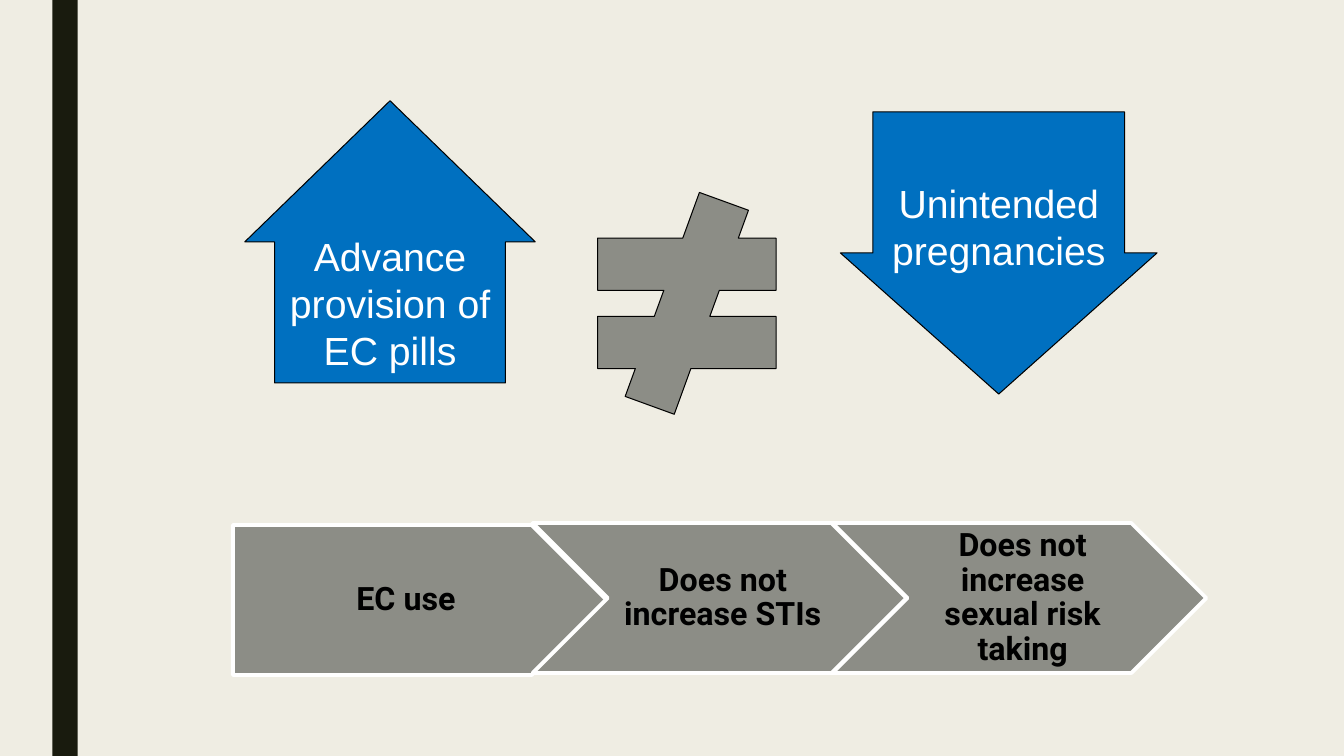
import pptx
import pptx.dml.color
import pptx.enum.shapes
import pptx.enum.text
import pptx.util

Cm = pptx.util.Cm
Pt = pptx.util.Pt
RGBColor = pptx.dml.color.RGBColor
SHAPE = pptx.enum.shapes.MSO_SHAPE
ANCHOR = pptx.enum.text.MSO_ANCHOR
CENTER = pptx.enum.text.PP_ALIGN.CENTER

CREAM = RGBColor(0xEF, 0xED, 0xE3)
DARK = RGBColor(0x19, 0x1B, 0x0E)
BLUE = RGBColor(0x00, 0x70, 0xC0)
GRAY = RGBColor(0x8C, 0x8D, 0x86)
BLACK = RGBColor(0, 0, 0)
WHITE = RGBColor(0xFF, 0xFF, 0xFF)


def add_figure(slide, preset, box, fill, line=None, weight=0.75):
    """Draw a preset shape in box (left, top, width, height in cm)."""
    figure = slide.shapes.add_shape(preset, *map(Cm, box))
    figure.shadow.inherit = False
    figure.fill.solid()
    figure.fill.fore_color.rgb = fill
    if line is None:
        figure.line.fill.background()
    else:
        figure.line.color.rgb = line
        figure.line.width = Pt(weight)
    return figure


def add_label(slide, box, wording, font, size, color, bold=False):
    """Add centred text in box and return its text frame."""
    frame = slide.shapes.add_textbox(*map(Cm, box)).text_frame
    frame.word_wrap = True
    paragraph = frame.paragraphs[0]
    paragraph.alignment = CENTER
    run = paragraph.add_run()
    run.text = wording
    run.font.name = font
    run.font.size = Pt(size)
    run.font.bold = bold
    run.font.color.rgb = color
    return frame


def add_side_bar(slide, box):
    add_figure(slide, SHAPE.RECTANGLE, box, DARK)


def add_trend_arrow(slide, preset, box, wording, inset, drop, label_height):
    """Draw a block arrow with a label inset from its sides, drop below its top."""
    left, top, width, height = box
    arrow = add_figure(slide, preset, box, BLUE, BLACK)
    arrow.adjustments[0] = 0.795
    arrow.adjustments[1] = 0.5
    label_box = (left + inset, top + drop, width - 2 * inset, label_height)
    add_label(slide, label_box, wording, "Arial", 28, WHITE)


def add_comparison(slide, box):
    """Place the rising arrow, the not-equal sign and the falling arrow."""
    left, top, width, height = box
    arrow_height = 7.11
    falling_width = 7.98
    add_trend_arrow(slide, SHAPE.UP_ARROW, (left, top, 7.32, arrow_height),
                    "Advance provision of EC pills", 0.72, 3.18, 3.81)
    add_figure(slide, SHAPE.MATH_NOT_EQUAL,
               (left + 8.08, top + 2.31, 6.12, 5.59), GRAY, BLACK)
    add_trend_arrow(slide, SHAPE.DOWN_ARROW,
                    (left + width - falling_width, top + height - arrow_height,
                     falling_width, arrow_height),
                    "Unintended pregnancies", 0.76, 1.57, 2.62)


def add_finding_chain(slide, box, findings):
    """Spread interlocking steps across box: a pentagon, then chevrons."""
    left, top, width, height = box
    step_width = 9.42
    pitch = (width - step_width) / (len(findings) - 1)
    notch = height / 2
    for index, finding in enumerate(findings):
        x = left + index * pitch
        if index == 0:
            preset, y = SHAPE.PENTAGON, top + 0.05
            label_box = (x, y, step_width - notch / 2, height)
        else:
            preset, y = SHAPE.CHEVRON, top
            label_box = (x + notch, y, step_width - 2 * notch, height)
        add_figure(slide, preset, (x, y, step_width, height), GRAY, WHITE, 2.75)
        frame = add_label(slide, label_box, finding, "Roboto", 23, BLACK, True)
        frame.vertical_anchor = ANCHOR.MIDDLE
        frame.margin_left = Cm(0.33 if index == 0 else 0.25)
        frame.margin_right = Cm(0.08)
        frame.margin_top = frame.margin_bottom = Cm(0.18)
        frame.paragraphs[0].line_spacing = 0.9


def main():
    deck = pptx.Presentation()
    deck.slide_width = Cm(33.87)
    deck.slide_height = Cm(19.05)
    slide = deck.slides.add_slide(deck.slide_layouts[6])
    slide.background.fill.solid()
    slide.background.fill.fore_color.rgb = CREAM
    add_side_bar(slide, (1.32, 0, 0.64, 19.05))
    add_comparison(slide, (6.17, 2.54, 22.99, 7.39))
    add_finding_chain(slide, (5.87, 13.18, 24.53, 3.78),
                      ["EC use", "Does not increase STIs",
                       "Does not increase sexual risk taking"])
    deck.save("out.pptx")


if __name__ == "__main__":
    main()
